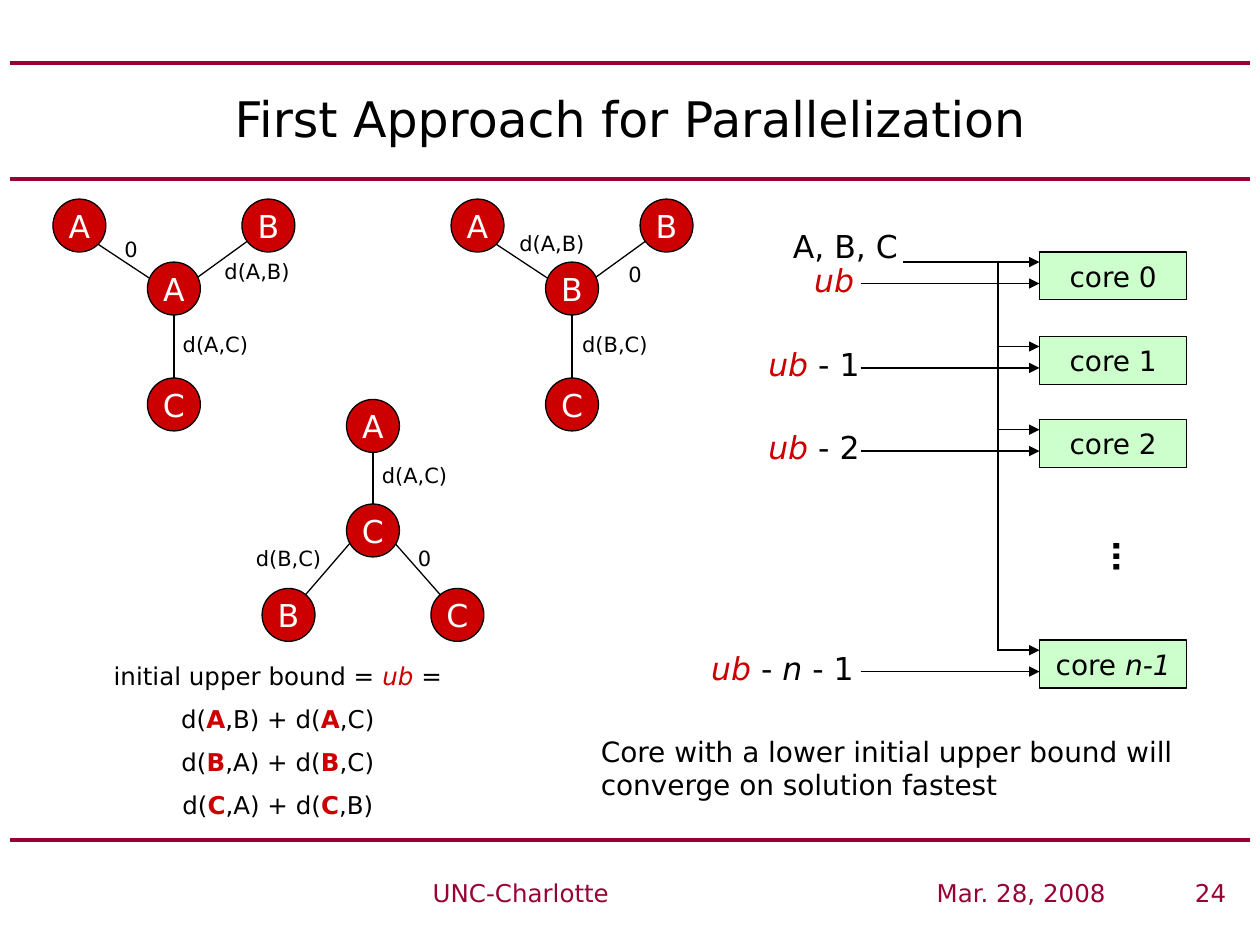
from lxml import etree
from pptx import Presentation
from pptx.dml.color import RGBColor
from pptx.enum.shapes import MSO_CONNECTOR as Connector, MSO_SHAPE as Shape
from pptx.enum.text import MSO_ANCHOR as Anchor, PP_ALIGN as Align
from pptx.oxml.ns import qn
from pptx.util import Inches, Pt

BLACK = RGBColor(0x00, 0x00, 0x00)
WHITE = RGBColor(0xFF, 0xFF, 0xFF)
MAROON = RGBColor(0x99, 0x00, 0x33)
RED = RGBColor(0xCC, 0x00, 0x00)
GREEN = RGBColor(0xCC, 0xFF, 0xCC)
FONT = "DejaVu Sans"
NODE_SIZE = 0.42

UB = ("ub", {"color": RED, "italic": True})

# Positions are relative to the top left corner of each tree.
Y_NODES = [(0, 0), (1.5, 0), (0.75, 1.42), (0.75, 0.5)]
Y_EDGES = [(0.33, 0.34, 0.83, 0.67), (1.08, 0.67, 1.66, 0.25), (0.96, 0.84, 0.96, 1.5)]
INVERTED_NODES = [(0, 1.5), (1.34, 1.5), (0.67, 0), (0.67, 0.83)]
INVERTED_EDGES = [(1, 1.08, 1.59, 1.75), (0.88, 0.25, 0.88, 0.91), (0.25, 1.66, 0.75, 1.08)]


def write(frame, paragraphs, size=18, color=BLACK, align=Align.CENTER,
          anchor=Anchor.TOP, gap=0, tabs=()):
    """Fill a text frame; a run is a string or a (string, format) pair."""
    frame.word_wrap = True
    frame.vertical_anchor = anchor
    for index, runs in enumerate(paragraphs):
        paragraph = frame.paragraphs[0] if index == 0 else frame.add_paragraph()
        paragraph.alignment = align
        if index and gap:
            paragraph.space_before = Pt(gap)
        if tabs:
            tab_list = etree.SubElement(paragraph._p.get_or_add_pPr(), qn("a:tabLst"))
            for position in tabs:
                etree.SubElement(tab_list, qn("a:tab"), pos=str(Inches(position)), algn="l")
        for part in runs:
            words, style = (part, {}) if isinstance(part, str) else part
            run = paragraph.add_run()
            run.text = words
            run.font.name = FONT
            run.font.size = Pt(size)
            run.font.bold = style.get("bold", False)
            run.font.italic = style.get("italic", False)
            run.font.color.rgb = style.get("color", color)


def add_text(slide, box, *paragraphs, **style):
    label = slide.shapes.add_textbox(*map(Inches, box))
    write(label.text_frame, paragraphs, **style)
    return label


def add_shape(slide, kind, box, fill, runs, **style):
    shape = slide.shapes.add_shape(kind, *map(Inches, box))
    shape.shadow.inherit = False
    shape.fill.solid()
    shape.fill.fore_color.rgb = fill
    shape.line.color.rgb = BLACK
    shape.line.width = Pt(0.75)
    frame = shape.text_frame
    frame.margin_left = frame.margin_right = frame.margin_top = frame.margin_bottom = 0
    write(frame, [runs], anchor=Anchor.MIDDLE, **style)


def add_line(slide, x1, y1, x2, y2, color=BLACK, width=0.75, arrow=False):
    line = slide.shapes.add_connector(Connector.STRAIGHT, *map(Inches, (x1, y1, x2, y2)))
    line.line.color.rgb = color
    line.line.width = Pt(width)
    if arrow:
        etree.SubElement(line.line._get_or_add_ln(), qn("a:tailEnd"), type="triangle")
    etree.SubElement(line._element.spPr, qn("a:effectLst"))


def add_frame(slide):
    """Title, horizontal rules and footer."""
    for y in (0.5, 1.42, 6.67):
        add_line(slide, 0.08, y, 9.92, y, color=MAROON, width=2.25)
    add_text(slide, (0.5, 0.5, 9, 0.87), ["First Approach for Parallelization"],
             size=28, anchor=Anchor.MIDDLE)
    add_text(slide, (2.83, 6.92, 7, 0.33), ["UNC-Charlotte\tMar. 28, 2008\t24"],
             size=14, color=MAROON, align=Align.RIGHT, tabs=(4, 6.05))


def add_tree(slide, left, top, letters, nodes, edges, distances):
    for x1, y1, x2, y2 in edges:
        add_line(slide, left + x1, top + y1, left + x2, top + y2)
    for letter, (x, y) in zip(letters, nodes):
        add_shape(slide, Shape.OVAL, (left + x, top + y, NODE_SIZE, NODE_SIZE),
                  RED, [letter], color=WHITE)
    for distance, x, y in distances:
        width = 0.58 if distance == "0" else 1.42
        add_text(slide, (left + x, top + y, width, 0.3), [distance], size=12)


def add_upper_bound(slide, left, top):
    def cost(root, first, second):
        center = (root, {"color": RED, "bold": True})
        return ["d(", center, f",{first}) + d(", center, f",{second})"]

    add_text(slide, (left, top, 3.25, 1.38), ["initial upper bound = ", UB, " ="],
             cost("A", "B", "C"), cost("B", "A", "C"), cost("C", "A", "B"),
             size=14, gap=7.7)


def add_cores(slide, left, top):
    """Cores, each fed by the shared trunk and by its own upper bound."""
    core_x, trunk_x, bound_x = left + 2.83, left + 2.5, left + 1.41
    last = ("n", {"italic": True})
    cores = [
        (0.25, ["core 0"], 0.41, [UB]),
        (0.92, ["core 1"], 0.25, [UB, " - 1"]),
        (1.58, ["core 2"], 0.25, [UB, " - 2"]),
        (3.33, ["core ", ("n-1", {"italic": True})], 0, [UB, " - ", last, " - 1"]),
    ]
    add_text(slide, (left + 0.5, top, 1.58, 0.4), ["A, B, C"])
    add_line(slide, trunk_x, top + 0.33, trunk_x, top + 3.42)
    for index, (offset, name, bound_left, bound) in enumerate(cores):
        y = top + offset
        add_shape(slide, Shape.RECTANGLE, (core_x, y, 1.17, 0.38), GREEN, name, size=16)
        add_text(slide, (left + bound_left, y + 0.02, 1.58, 0.4), bound)
        input_x = trunk_x if index else left + 1.75
        add_line(slide, input_x, y + 0.08, core_x, y + 0.08, arrow=True)
        add_line(slide, bound_x, y + 0.25, core_x, y + 0.25, arrow=True)
    dots = add_text(slide, (left + 2.78, top + 2.47, 1.17, 0.4), [("…", {"bold": True})])
    dots.rotation = 270


def main():
    deck = Presentation()
    deck.slide_width, deck.slide_height = Inches(10), Inches(7.5)
    slide = deck.slides.add_slide(deck.slide_layouts[6])
    add_frame(slide)
    add_tree(slide, 0.42, 1.58, "ABCA", Y_NODES, Y_EDGES,
             [("d(A,B)", 0.91, 0.42), ("0", 0.33, 0.25), ("d(A,C)", 0.58, 1)])
    add_tree(slide, 3.58, 1.58, "ABCB", Y_NODES, Y_EDGES,
             [("d(A,B)", 0.09, 0.2), ("0", 1.17, 0.45), ("d(B,C)", 0.59, 1)])
    add_tree(slide, 2.08, 3.17, "BCAC", INVERTED_NODES, INVERTED_EDGES,
             [("d(B,C)", -0.5, 1.11), ("0", 1, 1.11), ("d(A,C)", 0.5, 0.45)])
    add_upper_bound(slide, 0.58, 5.2)
    add_cores(slide, 5.42, 1.75)
    add_text(slide, (4.67, 5.78, 5.25, 0.64),
             ["Core with a lower initial upper bound will converge on solution fastest"],
             size=16, align=Align.LEFT)
    deck.save("out.pptx")


if __name__ == "__main__":
    main()
